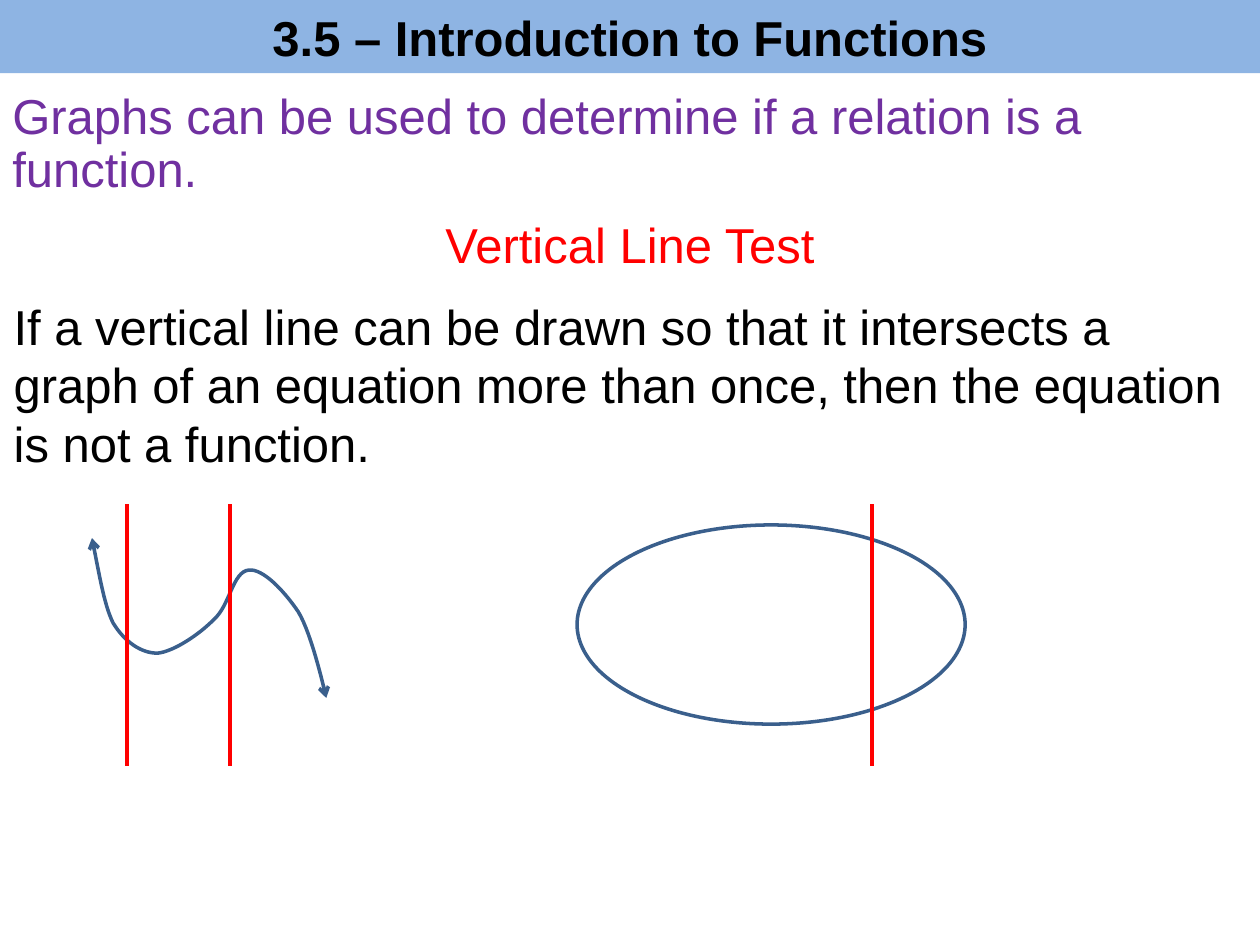
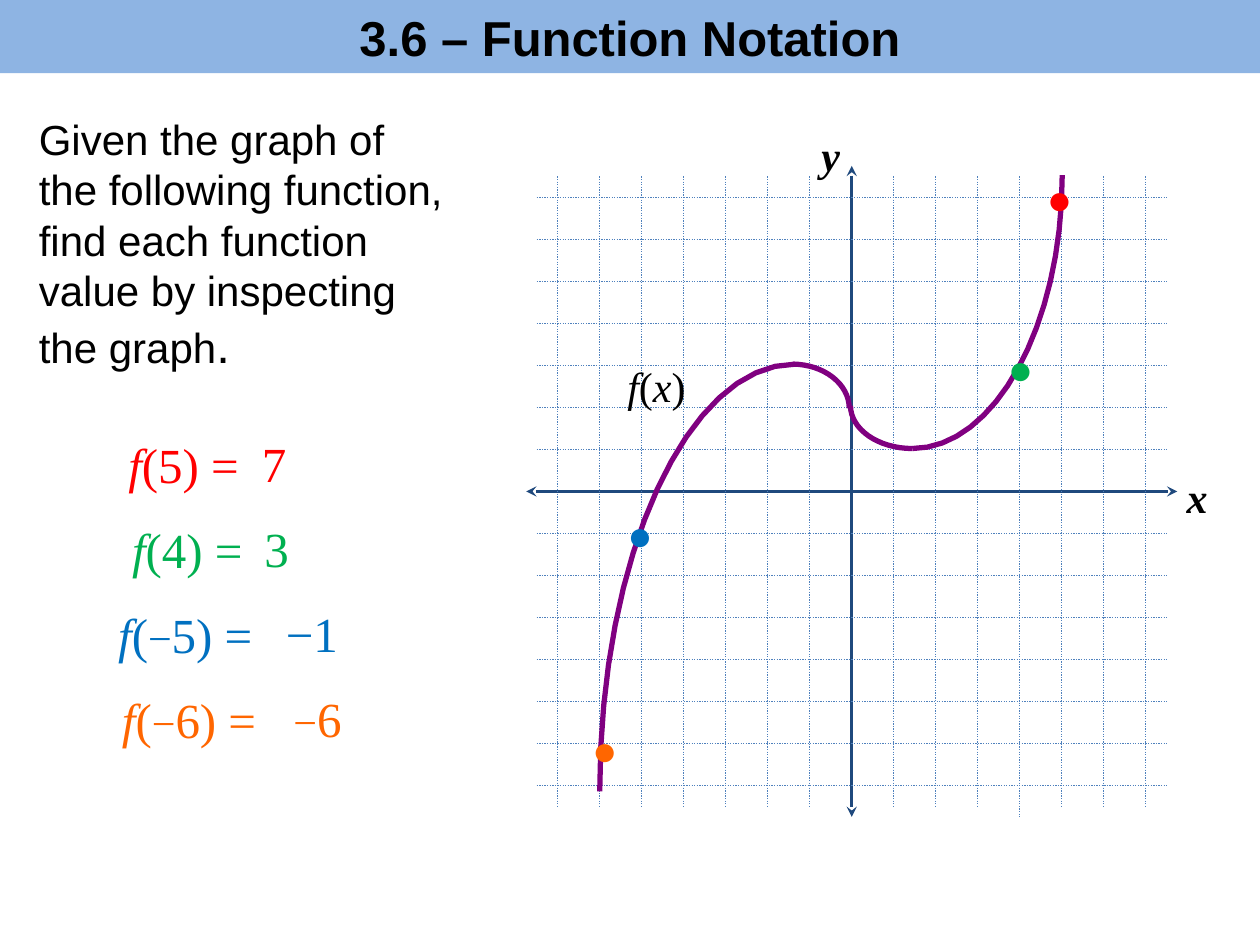
from pptx import Presentation
from pptx.dml.color import RGBColor
from pptx.enum.dml import MSO_LINE as Dash
from pptx.enum.shapes import MSO_CONNECTOR as Link, MSO_SHAPE as Form
from pptx.enum.text import MSO_ANCHOR as Anchor, PP_ALIGN as Align
from pptx.oxml.ns import qn
from pptx.util import Inches, Pt
from lxml.etree import SubElement

WIDE, HIGH = 10, 7.5
SANS, SERIF = "Arial", "Times New Roman"
BLACK, RED, GREEN, BLUE = "000000", "FF0000", "00B050", "0070C0"
ORANGE, VIOLET, PURPLE = "FF6600", "7030A0", "800080"
BAND, STEEL, NAVY, GRID = "8EB4E3", "3A5F8C", "1F497D", "4F81BD"


def tint(code):
    return RGBColor.from_string(code)


def inch(*vals):
    return [Inches(v) for v in vals]


# Shared helpers
def stroke(shape, code, width, tip=None):
    shape.line.color.rgb = tint(code)
    shape.line.width = Pt(width)
    if tip:
        ln = shape._element.spPr.get_or_add_ln()
        for end in ("a:headEnd", "a:tailEnd"):
            SubElement(ln, qn(end), type=tip)


def rule(shapes, start, end, code, width, tip=None, dash=None):
    line = shapes.add_connector(Link.STRAIGHT, *inch(*start, *end))
    stroke(line, code, width)
    if dash:
        line.line.dash_style = dash
    if tip:
        stroke(line, code, width, tip)
    SubElement(line._element.spPr, qn("a:effectLst"))


def bezier(a, b, c, d, steps=16):
    """Points along a cubic curve, without its start."""
    for n in range(1, steps + 1):
        t = n / steps
        u = 1 - t
        yield tuple(u**3 * p + 3 * u * u * t * q + 3 * u * t * t * r + t**3 * s
                    for p, q, r, s in zip(a, b, c, d))


def trace(shapes, points, code, width, tip=None):
    first, *rest = [inch(*p) for p in points]
    pen = shapes.build_freeform(*first, scale=1.0)
    pen.add_line_segments(rest, close=False)
    curve = pen.convert_to_shape()
    curve.fill.background()
    curve.shadow.inherit = False
    stroke(curve, code, width, tip)


def write(shapes, box, runs, code=BLACK, size=28, face=SANS, align=Align.LEFT,
          bold=False, lead=None, wrap=True):
    """Runs are a string, or pairs of text and font changes."""
    frame = shapes.add_textbox(*inch(*box)).text_frame
    frame.word_wrap = wrap
    fill(frame.paragraphs[0], runs, code, size, face, align, bold)
    if lead:
        frame.paragraphs[0].line_spacing = lead


def fill(para, runs, code, size, face, align, bold):
    para.alignment = align
    font = para.font
    font.name, font.size, font.bold = face, Pt(size), bold
    font.color.rgb = tint(code)
    for text, change in [(runs, {})] if isinstance(runs, str) else runs:
        run = para.add_run()
        run.text = text
        for key, val in change.items():
            setattr(run.font, key, val)


def band(slide, title):
    bar = slide.shapes.add_shape(Form.RECTANGLE, *inch(0, 0, WIDE, 0.58))
    bar.shadow.inherit = False
    bar.fill.solid()
    bar.fill.fore_color.rgb = tint(BAND)
    bar.line.fill.background()
    bar.text_frame.vertical_anchor = Anchor.MIDDLE
    fill(bar.text_frame.paragraphs[0], title, BLACK, 28, SANS, Align.CENTER, True)


# Vertical line test
def cuts(slide, box, shares):
    x, y, w, h = box
    for share in shares:
        at = x + share * w
        rule(slide.shapes, (at, y), (at, y + h), RED, 2.25)


def wave(slide, box):
    x, y, w, h = box
    top, tall = y + 0.13 * h, 0.61 * h
    knots = [(0, 0), (.03, .21), (.05, .41), (.09, .53),
             (.14, .65), (.21, .72), (.28, .72),
             (.35, .71), (.46, .6), (.52, .51),
             (.59, .42), (.6, .21), (.67, .2),
             (.73, .19), (.82, .33), (.88, .46),
             (.94, .6), (1, 1), (1, 1)]
    spots = [(x + p * w, top + q * tall) for p, q in knots]
    points = spots[:1]
    for n in range(0, len(spots) - 1, 3):
        points += bezier(*spots[n:n + 4])
    trace(slide.shapes, points, STEEL, 2, "arrow")
    cuts(slide, box, (.15, .59))


def oval(slide, box):
    x, y, w, h = box
    ring = slide.shapes.add_shape(
        Form.OVAL, *inch(x, y + 0.08 * h, w, 0.76 * h))
    ring.fill.background()
    ring.shadow.inherit = False
    stroke(ring, STEEL, 2)
    cuts(slide, box, (.76,))


def intro(slide):
    put = slide.shapes
    write(put, (0, 1.65, WIDE, 0.67), "Vertical Line Test", RED,
          align=Align.CENTER)
    write(put, (0, 0.68, WIDE, 0.95),
          "Graphs can be used to determine if a relation is a function.",
          VIOLET, lead=0.9)
    write(put, (0.01, 2.3, WIDE - 0.02, 1.52),
          "If a vertical line can be drawn so that it intersects a graph of an "
          "equation more than once, then the equation is not a function.")
    wave(slide, (0.73, 4, 1.86, 2.08))
    oval(slide, (4.58, 4, 3.08, 2.08))
    band(slide, "3.5 – Introduction to Functions")


# Function graph on a 15 by 15 grid
def graph(slide, box):
    x, y, w, h = box
    col, row = w / 15, h / 15

    def spot(p, q):
        return x + (7.5 + p) * col, y + (7.5 - q) * row

    # Axes and grid lines
    net = slide.shapes.add_group_shape().shapes
    for start, end in (((0, 7.75), (0, -7.75)), ((-7.75, 0), (7.75, 0))):
        rule(net, spot(*start), spot(*end), NAVY, 1.5, "stealth")
    for n in range(-7, 8):
        if n:
            low = -7.75 if n == 4 else -7.5
            for start, end in (((-7.5, n), (7.5, n)), ((n, 7.5), (n, low))):
                rule(net, spot(*start), spot(*end), GRID, 0.75,
                     dash=Dash.ROUND_DOT)
    for name, p, q, wide in (("x", 7.68, 0.63, 0.37), ("y", -1.02, 8.76, 0.35)):
        write(net, (*spot(p, q), wide, 0.5), [(name, {"italic": True})],
              size=24, face=SERIF, bold=True, wrap=False)

    # Quarter ellipses, each level at its start and upright at its end
    plot = slide.shapes.add_group_shape().shapes
    for (a, b), (c, d) in (((1.44, 1.02), (5.01, 7.53)),
                           ((1.44, 1.02), (-0.03, 2.04)),
                           ((-1.41, 3.03), (-0.06, 1.98)),
                           ((-1.35, 3.03), (-6, -7.14))):
        bend = ((a, b), (a + 0.55 * (c - a), b), (c, d - 0.55 * (d - b)), (c, d))
        points = [(a, b), *bezier(*bend)]
        trace(plot, [spot(*p) for p in points], PURPLE, 3)
    lean = {"italic": True}
    write(plot, (*spot(-5.64, 3.27), 0.69, 0.5),
          [("f", lean), ("(", {}), ("x", lean), (")", {})], size=24, face=SERIF)


def dots(slide, box):
    x, y, w, h = box
    for p, q, code in ((.79, -.016, RED), (.728, .254, GREEN),
                       (.124, .518, BLUE), (.068, .858, ORANGE)):
        write(slide.shapes, (x + p * w, y + q * h, 0.42, 0.4), "●", code, 24,
              SERIF)


def values(slide, box):
    x, y, w, h = box
    step = h / 4
    small = {"size": Pt(24)}
    minus = ("−", small)
    rows = (
        (.08, [("(5) =", {})], 1.14, "7", RED),
        (.11, [("(4) =", {})], 1.16, "3", GREEN),
        (0, [("(", {}), minus, ("5) =", {})], 1.33, "−1", BLUE),
        (.03, [("(", {}), minus, ("6) =", {})], 1.39,
         [minus, ("6", {})], ORANGE),
    )
    for n, (left, call, right, result, code) in enumerate(rows):
        top = y + n * step
        write(slide.shapes, (x + left, top, 1.5, 0.57),
              [("f", {"italic": True}), *call], code, face=SERIF)
        write(slide.shapes, (x + right, top - 0.01, w - right, 0.57),
              result, code, face=SERIF)


def notation(slide):
    plane = (4.26, 1.4, 5, 5)
    write(slide.shapes, (0.21, 0.85, 3.48, 2.19),
          [("Given the graph of the following function, find each function "
            "value by inspecting the graph", {}), (".", {"size": Pt(28)})],
          size=24)
    graph(slide, plane)
    values(slide, (0.84, 3.4, 2.08, 2.7))
    dots(slide, plane)
    band(slide, "3.6 – Function Notation")


def main():
    deck = Presentation()
    deck.slide_width, deck.slide_height = inch(WIDE, HIGH)
    for build in (intro, notation):
        build(deck.slides.add_slide(deck.slide_layouts[6]))
    deck.save("out.pptx")


if __name__ == "__main__":
    main()
